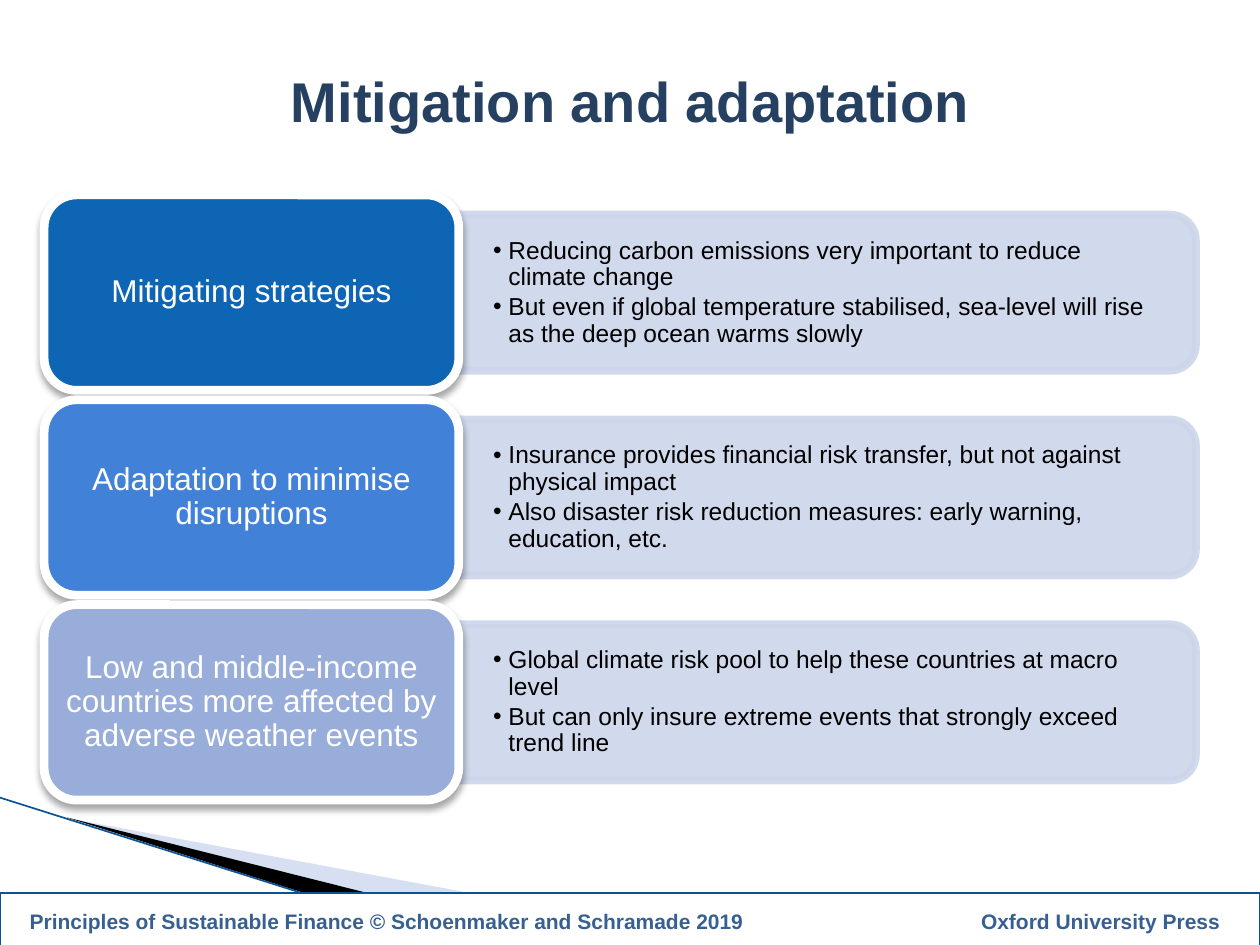
from lxml import etree
from pptx import Presentation
from pptx.dml.color import RGBColor
from pptx.enum.shapes import MSO_CONNECTOR, MSO_SHAPE
from pptx.enum.text import MSO_ANCHOR, MSO_AUTO_SIZE, PP_ALIGN
from pptx.oxml.ns import qn
from pptx.util import Cm, Pt

LEFT, CENTER = PP_ALIGN.LEFT, PP_ALIGN.CENTER
MIDDLE = MSO_ANCHOR.MIDDLE
NO_AUTOFIT = MSO_AUTO_SIZE.NONE
RECTANGLE, ROUNDED = MSO_SHAPE.RECTANGLE, MSO_SHAPE.ROUNDED_RECTANGLE
TWO_ROUNDED = MSO_SHAPE.ROUND_2_SAME_RECTANGLE
STRAIGHT = MSO_CONNECTOR.STRAIGHT

WHITE, BLACK = RGBColor(255, 255, 255), RGBColor(0, 0, 0)
NAVY = RGBColor(0x25, 0x40, 0x61)
FOOTER_BLUE = RGBColor(0x37, 0x60, 0x92)
EDGE_BLUE = RGBColor(0x0B, 0x53, 0x94)
PANEL_BLUE = RGBColor(0xCC, 0xD5, 0xEA)
WEDGE_BLUE = RGBColor(0x9D, 0xB2, 0xE1)
STRONG_BLUE = RGBColor(0x0E, 0x65, 0xB4)
MID_BLUE = RGBColor(0x41, 0x81, 0xD8)
SOFT_BLUE = RGBColor(0x98, 0xAD, 0xD9)

TITLE = "Mitigation and adaptation"
FOOTER = ("Principles of Sustainable Finance © Schoenmaker and Schramade 2019"
          "\tOxford University Press")
ROWS = [
    ("Mitigating strategies", STRONG_BLUE, [
        "Reducing carbon emissions very important to reduce climate change",
        "But even if global temperature stabilised, sea-level will rise "
        "as the deep ocean warms slowly"]),
    ("Adaptation to minimise disruptions", MID_BLUE, [
        "Insurance provides financial risk transfer, but not against physical impact",
        "Also disaster risk reduction measures: early warning, education, etc."]),
    ("Low and middle-income countries more affected by adverse weather events",
     SOFT_BLUE, [
        "Global climate risk pool to help these countries at macro level",
        "But can only insure extreme events that strongly exceed trend line"]),
]
WEDGES = [
    ([(1.4, 16.5), (15.1, 19.05), (11.55, 19.05)], WEDGE_BLUE, 40),
    ([(1.35, 16.48), (11.58, 19.05), (9.42, 19.05)], BLACK, 100),
]

CARD_LEFT, CARD_TOP, CARD_WIDTH, CARD_HEIGHT, ROW_STEP = 0.89, 3.93, 8.36, 3.94, 4.13
PANEL_LEFT, PANEL_WIDTH, PANEL_HEIGHT = CARD_LEFT + CARD_WIDTH, 14.86, 3.15
LIST_WIDTH, LIST_HEIGHT = 14.71, 2.84

TITLE_FONT = dict(name="Arial", size=Pt(32), bold=True)
CARD_FONT = dict(name="Arial", size=Pt(18), bold=False)
LIST_FONT = dict(name="Arial", size=Pt(14), bold=False)
FOOTER_FONT = dict(name="Arial", size=Pt(12), bold=True)


def apply(target, values):
    for name, value in values.items():
        setattr(target, name, value)


def add_xml(parent, tag, **attributes):
    return etree.SubElement(parent, qn(tag), attributes)


def place(shape, left, top, width, height):
    apply(shape, dict(left=Cm(left), top=Cm(top), width=Cm(width), height=Cm(height)))


def set_frame(shape, side, edge):
    apply(shape.text_frame, dict(
        word_wrap=True, auto_size=NO_AUTOFIT, vertical_anchor=MIDDLE,
        margin_left=Cm(side), margin_right=Cm(side),
        margin_top=Cm(edge), margin_bottom=Cm(edge)))


def write(para, text, font, color, **layout):
    para.text = text
    apply(para, dict(space_before=Pt(0)) | layout)
    apply(para.font, font)
    para.font.color.rgb = color


def paint(shape, fill, line=None, width=0, opacity=100):
    shape.shadow.inherit = False
    shape.fill.solid()
    shape.fill.fore_color.rgb = fill
    if line is None:
        shape.line.fill.background()
    else:
        shape.line.color.rgb = line
        shape.line.width = Pt(width)
    if opacity < 100:
        for color in shape.element.spPr.iter(qn("a:srgbClr")):
            add_xml(color, "a:alpha", val=str(opacity * 1000))


def add_shape(kind, left, top, width, height):
    return page.shapes.add_shape(kind, Cm(left), Cm(top), Cm(width), Cm(height))


def add_panel(middle):
    center = PANEL_LEFT + PANEL_WIDTH / 2
    panel = add_shape(TWO_ROUNDED, center - PANEL_HEIGHT / 2, middle - PANEL_WIDTH / 2,
                      PANEL_HEIGHT, PANEL_WIDTH)
    panel.rotation = 90
    paint(panel, PANEL_BLUE, PANEL_BLUE, 4.33, 90)


def fill_list(box, items, middle):
    page.shapes.element.append(box.element)
    place(box, PANEL_LEFT, middle - LIST_HEIGHT / 2, LIST_WIDTH, LIST_HEIGHT)
    set_frame(box, 0.69, 0.36)
    frame = box.text_frame
    for index, item in enumerate(items):
        para = frame.add_paragraph() if index else frame.paragraphs[0]
        properties = para._p.get_or_add_pPr()
        properties.set("marL", str(Cm(0.31)))
        properties.set("indent", str(-Cm(0.31)))
        add_xml(properties, "a:buChar", char="•")
        write(para, item, LIST_FONT, BLACK, alignment=LEFT,
              line_spacing=0.9, space_after=Pt(2.1))


def add_card(label, color, top):
    card = add_shape(ROUNDED, CARD_LEFT, top, CARD_WIDTH, CARD_HEIGHT)
    paint(card, color, WHITE, 5)
    effects = card.element.spPr.find(qn("a:effectLst"))
    shadow = add_xml(effects, "a:outerShdw", blurRad=str(Pt(4)), dist=str(Pt(3)),
                     dir="5400000", rotWithShape="0")
    add_xml(add_xml(shadow, "a:srgbClr", val="000000"), "a:alpha", val="35000")
    set_frame(card, 0.18, 0.1)
    write(card.text_frame.paragraphs[0], label, CARD_FONT, WHITE,
          alignment=CENTER, line_spacing=0.9)


deck = Presentation()
deck.slide_width, deck.slide_height = Cm(25.4), Cm(19.05)
page = deck.slides.add_slide(deck.slide_layouts.get_by_name("Comparison"))
title, *lists = page.placeholders

for points, color, opacity in WEDGES:
    corners = [(Cm(x), Cm(y)) for x, y in points]
    builder = page.shapes.build_freeform(*corners[0])
    builder.add_line_segments(corners[1:])
    paint(builder.convert_to_shape(), color, opacity=opacity)

slope = page.shapes.add_connector(STRAIGHT, Cm(0), Cm(16.08), Cm(9.4), Cm(19.05))
slope.line.color.rgb = EDGE_BLUE
slope.line.width = Pt(0.95)
add_xml(slope.element.spPr, "a:effectLst")

for index, (label, color, items) in enumerate(ROWS):
    top = CARD_TOP + index * ROW_STEP
    middle = top + CARD_HEIGHT / 2
    add_panel(middle)
    fill_list(lists[index], items, middle)
    add_card(label, color, top)

for spare in lists[len(ROWS):]:
    spare.element.getparent().remove(spare.element)

place(title, 0.71, 1.12, 24, 1.8)
set_frame(title, 0.25, 0.13)
write(title.text_frame.paragraphs[0], TITLE, TITLE_FONT, NAVY, alignment=CENTER)

footer = add_shape(RECTANGLE, 0, 18, 25.4, 1.12)
paint(footer, WHITE, EDGE_BLUE, 1.5)
set_frame(footer, 0.6, 0.13)
line = footer.text_frame.paragraphs[0]
tabs = add_xml(line._p.get_or_add_pPr(), "a:tabLst")
add_xml(tabs, "a:tab", pos=str(Cm(24)), algn="r")
write(line, FOOTER, FOOTER_FONT, FOOTER_BLUE, alignment=LEFT)

deck.save("out.pptx")
